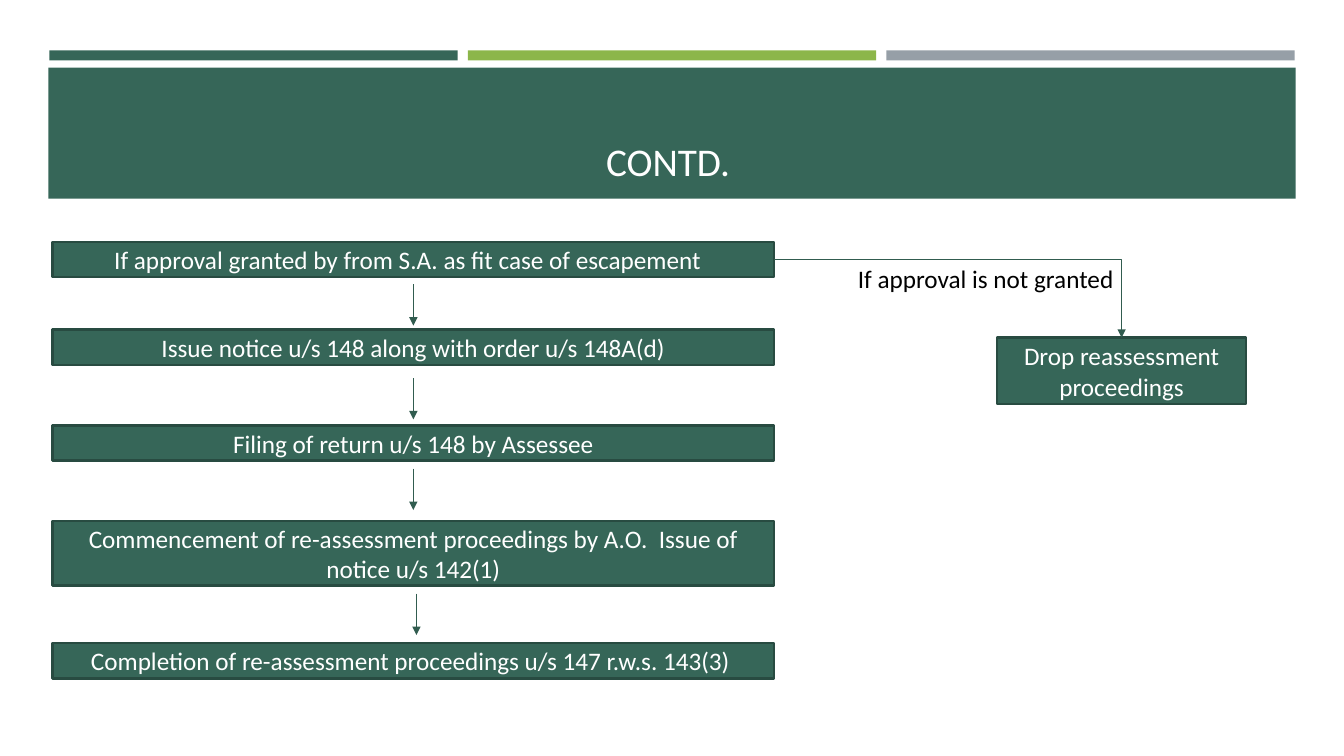
from dataclasses import dataclass
from pptx import Presentation
from pptx.dml.color import RGBColor as Rgb
from pptx.enum.shapes import MSO_CONNECTOR as Link, MSO_SHAPE as Kind
from pptx.enum.text import MSO_ANCHOR as Anchor, PP_ALIGN as Align
from pptx.oxml.ns import qn
from pptx.util import Inches, Pt
from lxml.etree import SubElement

TITLE = "CONTD. "
STEPS = [
    ("If approval granted by from S.A. as fit case of escapement  ", 2.4, 0.35),
    ("Issue notice u/s 148 along with order u/s 148A(d)", 3.27, 0.35),
    ("Filing of return u/s 148 by Assessee", 4.22, 0.35),
    ("Commencement of re-assessment proceedings by A.O.  Issue of notice u/s 142(1)", 5.17, 0.64),
    ("Completion of re-assessment proceedings u/s 147 r.w.s. 143(3) ", 6.38, 0.35),
]
ARROWS = [(4.1, 0.07), (4.1, 0.13), (4.1, 0.08), (4.13, 0.08)]
DROP = "Drop reassessment proceedings"
LABEL = "If approval is not granted"


@dataclass(frozen=True)
class Theme:
    green: str = "366658"
    lime: str = "8CB64A"
    grey: str = "969FA7"
    edge: str = "284B41"
    arrow: str = "315C4F"
    white: str = "FFFFFF"
    black: str = "000000"
    font: str = "Calibri"
    head: int = 28
    body: int = 18


look = Theme()
WIDE, HIGH = 13.33, 7.5
LEFT, BAR, GAP = 0.49, 4.05, 0.1
STEP_X, STEP_W = 0.52, 7.16
REACH = 0.41

deck = Presentation()
deck.slide_width, deck.slide_height = Inches(WIDE), Inches(HIGH)
slide = deck.slides.add_slide(deck.slide_layouts[6])
shapes = slide.shapes


def inch(*nums):
    return [Inches(n) for n in nums]


def write(shape, text, size, color, align, anchor):
    frame = shape.text_frame
    frame.word_wrap = True
    frame.vertical_anchor = anchor
    para = frame.paragraphs[0]
    para.alignment = align
    run = para.add_run()
    run.text = text
    run.font.name = look.font
    run.font.size = Pt(size)
    run.font.color.rgb = Rgb.from_string(color)


def block(place, fill):
    shape = shapes.add_shape(Kind.RECTANGLE, *inch(*place))
    shape.shadow.inherit = False
    shape.fill.solid()
    shape.fill.fore_color.rgb = Rgb.from_string(fill)
    shape.line.fill.background()
    return shape


def box(place, text):
    shape = block(place, look.green)
    shape.line.color.rgb = Rgb.from_string(look.edge)
    shape.line.width = Pt(1.75)
    write(shape, text, look.body, look.white, Align.CENTER, Anchor.MIDDLE)
    return shape


def note(place, text, size, color, align, anchor):
    write(shapes.add_textbox(*inch(*place)), text, size, color, align, anchor)


def arrow(kind, *ends):
    link = shapes.add_connector(kind, *inch(*ends))
    link.line.color.rgb = Rgb.from_string(look.arrow)
    link.line.width = Pt(1)
    SubElement(link.line._get_or_add_ln(), qn("a:tailEnd"), type="triangle")
    SubElement(link._element.spPr, qn("a:effectLst"))
    return link


for col, color in enumerate((look.green, look.lime, look.grey)):
    block((LEFT + col * (BAR + GAP), 0.5, BAR, 0.1), color)
block((0.48, 0.67, 12.37, 1.3), look.green)
note((0.64, 0.77, 12.06, 1.11), TITLE, look.head, look.white, Align.CENTER, Anchor.BOTTOM)

boxes = [box((STEP_X, top, STEP_W, tall), text) for text, top, tall in STEPS]
drop = box((9.89, 3.35, 2.47, 0.66), DROP)

bend = arrow(Link.ELBOW, 7.68, 2.57, 11.13, 3.35)
bend._element.spPr.find(qn("a:prstGeom")).set("prst", "bentConnector2")
bend.begin_connect(boxes[0], 3)
bend.end_connect(drop, 0)
note((8.41, 2.56, 4.15, 0.4), LABEL, look.body, look.black, Align.LEFT, Anchor.TOP)

for (_, top, tall), (x, gap) in zip(STEPS, ARROWS):
    start = top + tall + gap
    arrow(Link.STRAIGHT, x, start, x, start + REACH)

deck.save("out.pptx")
